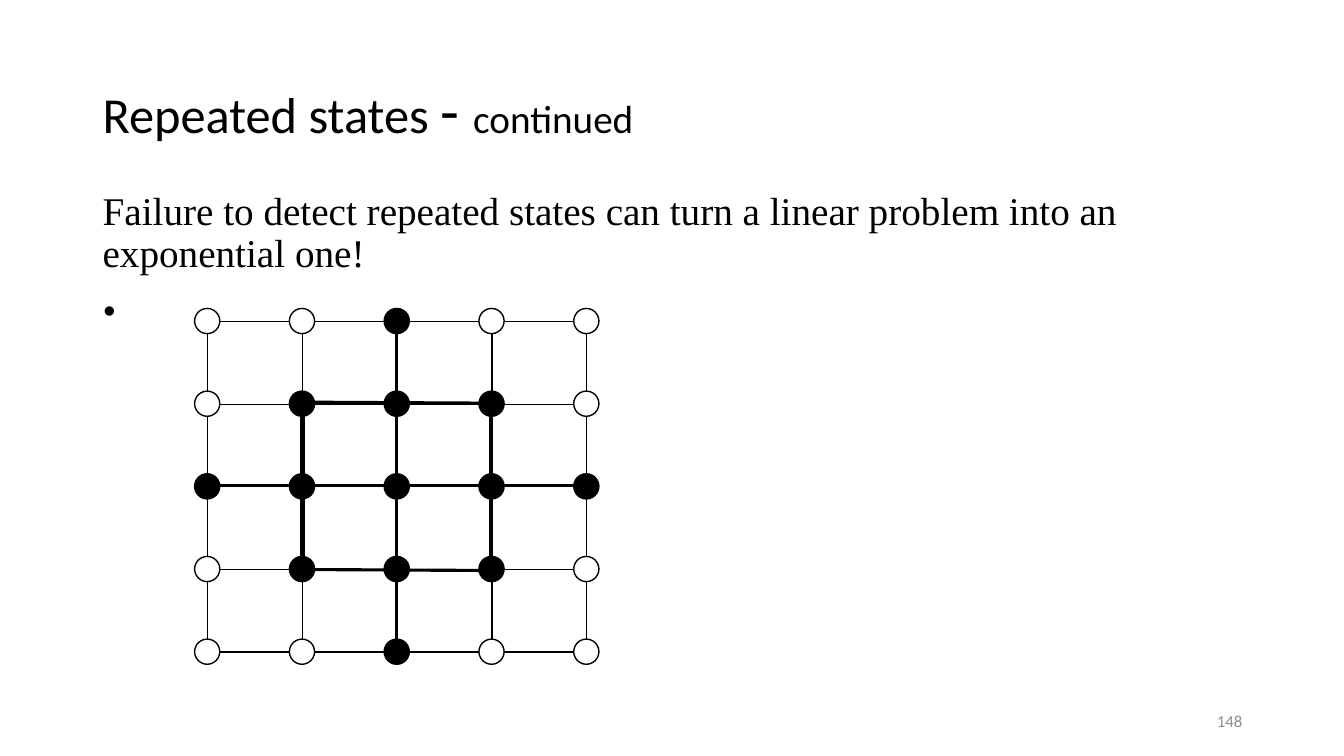
from itertools import product

from lxml.etree import SubElement
from pptx import Presentation
from pptx.dml.color import RGBColor
from pptx.enum.shapes import MSO_CONNECTOR, MSO_SHAPE
from pptx.enum.text import MSO_ANCHOR, PP_ALIGN
from pptx.oxml import parse_xml
from pptx.oxml.ns import nsdecls, qn
from pptx.util import Inches, Pt

THEME = {
    "ink": RGBColor(0x00, 0x00, 0x00),
    "paper": RGBColor(0xFF, 0xFF, 0xFF),
    "muted": RGBColor(0x8C, 0x8C, 0x8C),
    "heading_font": "Calibri",
    "body_font": "Times New Roman",
    "title": Pt(36),
    "dash": Pt(44),
    "subtitle": Pt(28),
    "body": Pt(28),
    "number": Pt(12),
    "thin": Pt(1),
    "path": Pt(2.25),
    "strong": Pt(3),
}

deck = Presentation()
deck.slide_width, deck.slide_height = Inches(13.33), Inches(7.5)
slide = deck.slides.add_slide(deck.slide_layouts[6])


def add_text(box, paragraphs, font, color, frame_format, paragraph_format):
    frame = slide.shapes.add_textbox(*map(Inches, box)).text_frame
    for name, value in frame_format.items():
        setattr(frame, name, value)
    for index, runs in enumerate(paragraphs):
        paragraph = frame.add_paragraph() if index else frame.paragraphs[0]
        for name, value in paragraph_format.items():
            setattr(paragraph, name, value)
        for words, size in runs:
            run = paragraph.add_run()
            run.text = words
            for name, value in {"name": font, "size": size}.items():
                setattr(run.font, name, value)
            run.font.color.rgb = color


add_text(
    (9.42, 6.95, 3, 0.4),
    [[("148", THEME["number"])]],
    THEME["heading_font"], THEME["muted"],
    {"word_wrap": True, "vertical_anchor": MSO_ANCHOR.MIDDLE},
    {"alignment": PP_ALIGN.RIGHT},
)
add_text(
    (0.92, 0.4, 7.4, 1.45),
    [[("Repeated states ", THEME["title"]), ("- ", THEME["dash"]),
      ("continued", THEME["subtitle"])]],
    THEME["heading_font"], THEME["ink"],
    {"word_wrap": True, "vertical_anchor": MSO_ANCHOR.MIDDLE},
    {"line_spacing": 0.9},
)
add_text(
    (0.92, 1.85, 11.5, 5.25),
    [[("Failure to detect repeated states can turn a linear problem into an "
       "exponential one!", THEME["body"])],
     [("•", THEME["body"])]],
    THEME["body_font"], THEME["ink"],
    {"word_wrap": True, "vertical_anchor": MSO_ANCHOR.TOP},
    {"line_spacing": 0.9, "space_before": Pt(10)},
)

CELLS = 4
LEFT, TOP = 2.06, 3.19
CELL_WIDTH, CELL_HEIGHT = 0.94, 0.82
grid = slide.shapes.add_table(
    CELLS, CELLS, Inches(LEFT), Inches(TOP),
    Inches(CELLS * CELL_WIDTH), Inches(CELLS * CELL_HEIGHT),
).table
for name, value in {"first_row": False, "horz_banding": False}.items():
    setattr(grid, name, value)
for cell in grid.iter_cells():
    properties = cell._tc.get_or_add_tcPr()
    for edge in ("lnL", "lnR", "lnT", "lnB"):
        border = SubElement(properties, qn(f"a:{edge}"), w=str(THEME["thin"]))
        fill = SubElement(border, qn("a:solidFill"))
        SubElement(fill, qn("a:srgbClr"), val=str(THEME["ink"]))
    cell.fill.solid()
    cell.fill.fore_color.rgb = THEME["paper"]

STATE_SIZE = 0.25
STATE_LEFT, STATE_TOP = 1.93, 3.06
CENTER = REACH = 2
for row, column in product(range(CELLS + 1), repeat=2):
    state = slide.shapes.add_shape(
        MSO_SHAPE.OVAL,
        Inches(STATE_LEFT + column * CELL_WIDTH), Inches(STATE_TOP + row * CELL_HEIGHT),
        Inches(STATE_SIZE), Inches(STATE_SIZE),
    )
    visited = abs(row - CENTER) + abs(column - CENTER) <= REACH
    state.shadow.inherit = False
    state.fill.solid()
    state.fill.fore_color.rgb = THEME["ink" if visited else "paper"]
    state.line.color.rgb = THEME["ink"]
    state.line.width = THEME["thin"]

for start_x, start_y, end_x, end_y, weight in (
    (3.03, 3.99, 4.9, 4, "path"),
    (3.03, 5.65, 4.89, 5.66, "path"),
    (2.03, 4.82, 5.86, 4.82, "path"),
    (3.93, 3.18, 3.93, 6.48, "path"),
    (3, 4.05, 3, 5.72, "strong"),
    (4.87, 4, 4.87, 5.67, "strong"),
):
    route = slide.shapes.add_connector(
        MSO_CONNECTOR.STRAIGHT, *map(Inches, (start_x, start_y, end_x, end_y))
    )
    route.line.color.rgb = THEME["ink"]
    route.line.width = THEME[weight]
    route._element.spPr.append(parse_xml(f"<a:effectLst {nsdecls('a')}/>"))

deck.save("out.pptx")
